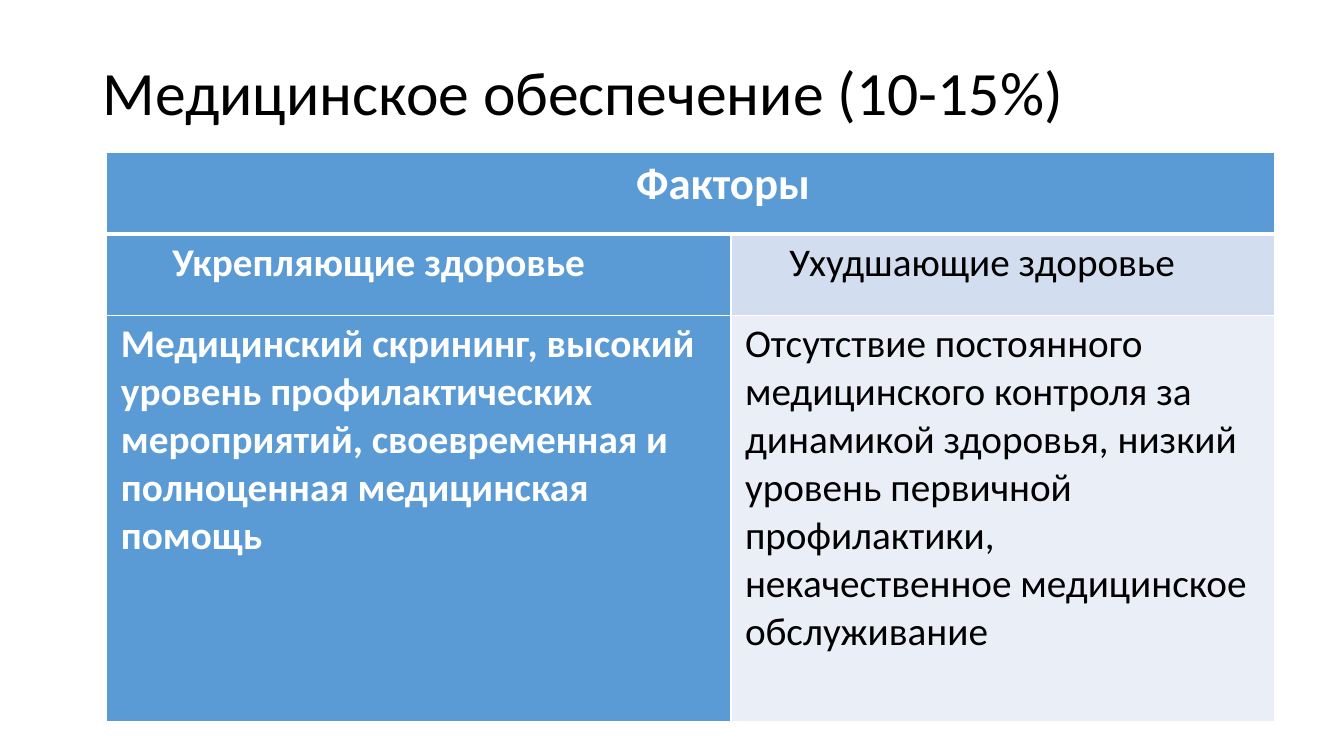
import lxml.etree
import pptx
import pptx.dml.color
import pptx.enum.text
import pptx.oxml.ns
import pptx.util

Inches = pptx.util.Inches
Pt = pptx.util.Pt

TITLE = "Медицинское обеспечение (10-15%)"
HEADING = "Факторы"
COLUMN_HEADS = ["Укрепляющие здоровье", "Ухудшающие здоровье"]
FACTORS = [
    "Медицинский скрининг, высокий уровень профилактических мероприятий, "
    "своевременная и полноценная медицинская помощь",
    "Отсутствие постоянного медицинского контроля за динамикой здоровья, "
    "низкий уровень первичной профилактики, некачественное медицинское обслуживание",
]
ROWS = [[HEADING, ""], COLUMN_HEADS, FACTORS]

THEME = {
    "font": "Calibri",
    "title_size": 44,
    "row_sizes": [32, 28, 28],
    "text": "000000",
    "light_text": "FFFFFF",
    "border": "FFFFFF",
    "accent": "5B9BD5",
    "row_tints": ["5B9BD5", "D2DEEF", "EAEFF7"],
}
COLUMN_WIDTHS = [6.19, 5.33]
ROW_HEIGHTS = [0.81, 0.81, 4.03]
LEFT_MARGINS = [[5.25, 0.14], [0.65, 0.58], [0.14, 0.14]]


def format_run(span, size, color, bold=False):
    span.font.name = THEME["font"]
    span.font.size = Pt(size)
    span.font.bold = bold
    span.font.color.rgb = pptx.dml.color.RGBColor.from_string(color)


def set_borders(cell, widths):
    properties = cell._tc.get_or_add_tcPr()
    qn = pptx.oxml.ns.qn
    for position, (side, width) in enumerate(widths.items()):
        line = lxml.etree.Element(qn(f"a:ln{side}"), w=str(Pt(width)))
        fill = lxml.etree.SubElement(line, qn("a:solidFill"))
        lxml.etree.SubElement(fill, qn("a:srgbClr"), val=THEME["border"])
        properties.insert(position, line)


def add_title(page):
    box = page.shapes.add_textbox(Inches(0.92), Inches(0.22), Inches(11.5), Inches(1.45))
    frame = box.text_frame
    frame.word_wrap = True
    frame.vertical_anchor = pptx.enum.text.MSO_ANCHOR.MIDDLE
    frame.text = TITLE
    para = frame.paragraphs[0]
    para.line_spacing = 0.9
    format_run(para.runs[0], THEME["title_size"], THEME["text"])


def fill_cell(cell, row, column):
    accented = row == 0 or column == 0
    cell.fill.solid()
    color = THEME["accent"] if accented else THEME["row_tints"][row]
    cell.fill.fore_color.rgb = pptx.dml.color.RGBColor.from_string(color)
    set_borders(cell, {"L": 1, "R": 1, "T": 3 if row == 1 else 1, "B": 3 if row == 0 else 1})
    cell.margin_left = Inches(LEFT_MARGINS[row][column])
    cell.margin_right = Inches(0.1)
    cell.margin_top = cell.margin_bottom = Inches(0.05)
    if not ROWS[row][column]:
        return
    cell.text_frame.text = ROWS[row][column]
    para = cell.text_frame.paragraphs[0]
    if row == 2:
        para.space_before = para.space_after = Pt(3)
    text_color = THEME["light_text"] if accented else THEME["text"]
    format_run(para.runs[0], THEME["row_sizes"][row], text_color, accented)


def add_factor_table(page):
    table = page.shapes.add_table(
        len(ROWS), len(COLUMN_WIDTHS), Inches(1.06), Inches(1.51),
        Inches(sum(COLUMN_WIDTHS)), Inches(sum(ROW_HEIGHTS)),
    ).table
    for column, width in zip(table.columns, COLUMN_WIDTHS):
        column.width = Inches(width)
    for row, height in zip(table.rows, ROW_HEIGHTS):
        row.height = Inches(height)
    table.cell(0, 0).merge(table.cell(0, 1))
    for row in range(len(ROWS)):
        for column in range(len(COLUMN_WIDTHS)):
            fill_cell(table.cell(row, column), row, column)


def main():
    deck = pptx.Presentation()
    deck.slide_width = Inches(13.33)
    deck.slide_height = Inches(7.5)
    page = deck.slides.add_slide(deck.slide_layouts[6])
    add_title(page)
    add_factor_table(page)
    deck.save("out.pptx")


if __name__ == "__main__":
    main()
